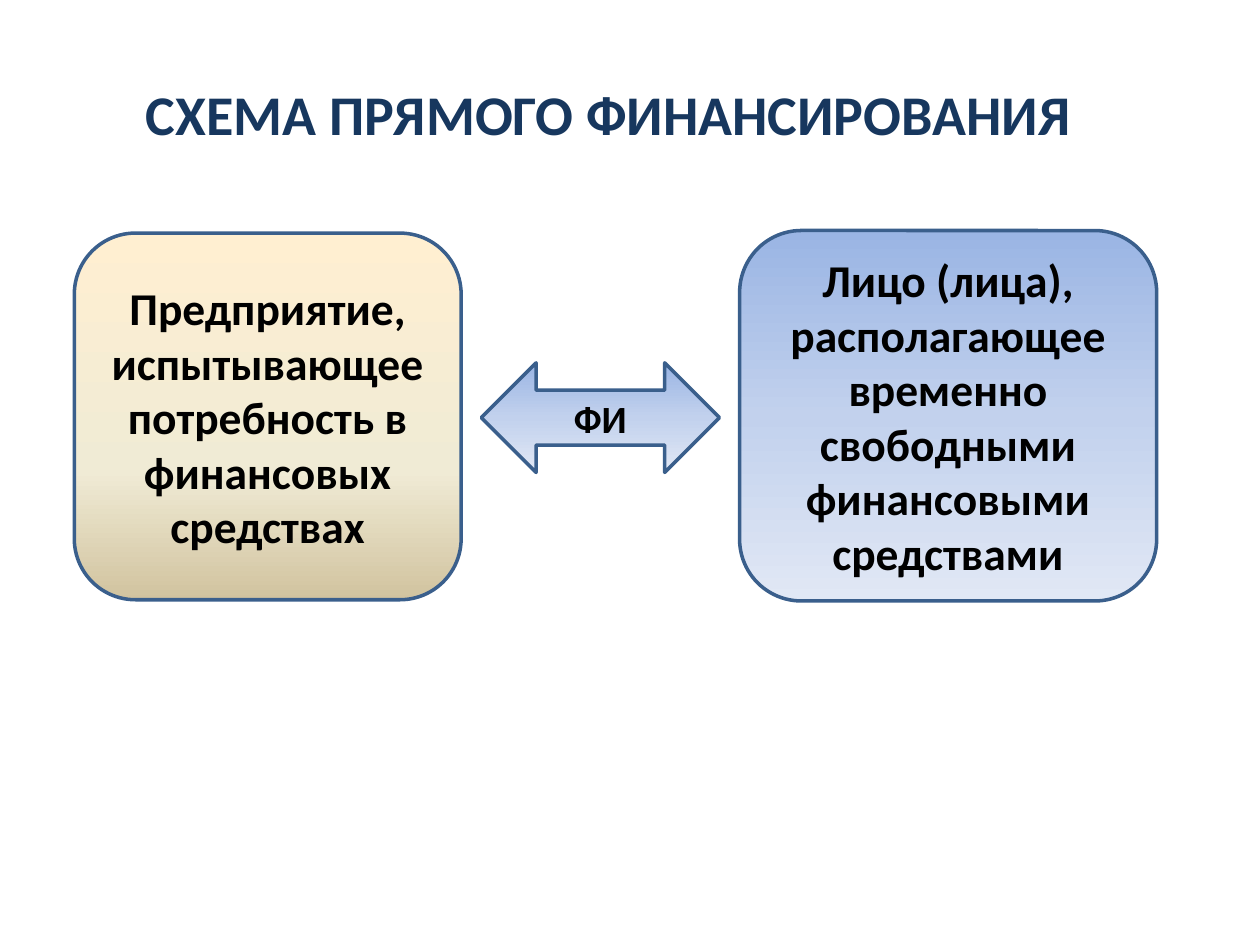
from lxml import etree
from pptx import Presentation
from pptx.dml.color import RGBColor
from pptx.enum import shapes, text
from pptx.oxml.ns import qn
from pptx.util import Inches, Pt

FONT = "Calibri"
NAVY = RGBColor(0x17, 0x37, 0x5E)
OUTLINE = RGBColor(0x3A, 0x5F, 0x8C)
BLACK = RGBColor(0, 0, 0)

# Gradient stops: position in percent, colour
SAND = [(0, RGBColor(0xFF, 0xEF, 0xD1)), (65, RGBColor(0xF0, 0xEB, 0xD5)),
        (100, RGBColor(0xD1, 0xC3, 0x9F))]
BLUE = [(0, RGBColor(0x9A, 0xB5, 0xE4)), (50, RGBColor(0xC2, 0xD1, 0xED)),
        (100, RGBColor(0xE1, 0xE8, 0xF5))]

TITLE = "СХЕМА ПРЯМОГО ФИНАНСИРОВАНИЯ"
TITLE_BOX = (0.62, 0.58, 8.42, 0.64)
ROUNDED = shapes.MSO_SHAPE.ROUNDED_RECTANGLE
ARROW = shapes.MSO_SHAPE.LEFT_RIGHT_ARROW

# Preset, (left, top, width, height), gradient, text size, text
SCHEME = [
    (ROUNDED, (0.59, 1.85, 3.07, 2.91), SAND, 26,
     "Предприятие, испытывающее потребность в финансовых средствах"),
    (ROUNDED, (5.87, 1.83, 3.31, 2.94), BLUE, 26,
     "Лицо (лица), располагающее временно свободными финансовыми средствами"),
    (ARROW, (3.82, 2.88, 1.89, 0.87), BLUE, 22, "ФИ"),
]


def write_centred(shape, wording, size, color):
    frame = shape.text_frame
    frame.word_wrap = True
    frame.text = wording
    paragraph = frame.paragraphs[0]
    paragraph.alignment = text.PP_ALIGN.CENTER
    font = paragraph.runs[0].font
    font.name, font.size, font.bold = FONT, Pt(size), True
    font.color.rgb = color
    return paragraph


def fill_downwards(shape, stops):
    """Fill with a top-to-bottom gradient of any number of stops."""
    shape.fill.gradient()
    shape.fill.gradient_angle = 270
    stop_list = shape.element.spPr.find(qn("a:gradFill")).find(qn("a:gsLst"))
    for old_stop in list(stop_list):
        stop_list.remove(old_stop)
    for percent, color in stops:
        stop = etree.SubElement(stop_list, qn("a:gs"), pos=str(percent * 1000))
        etree.SubElement(stop, qn("a:srgbClr"), val=str(color))


def add_block(slide, preset, box, stops, size, wording):
    shape = slide.shapes.add_shape(preset, *map(Inches, box))
    shape.shadow.inherit = False
    fill_downwards(shape, stops)
    shape.line.color.rgb = OUTLINE
    shape.line.width = Pt(2)
    shape.text_frame.vertical_anchor = text.MSO_ANCHOR.MIDDLE
    write_centred(shape, wording, size, BLACK)


def main():
    presentation = Presentation()
    presentation.slide_width = Inches(10)
    presentation.slide_height = Inches(7.5)
    slide = presentation.slides.add_slide(presentation.slide_layouts[6])

    title = slide.shapes.add_textbox(*map(Inches, TITLE_BOX))
    title.text_frame.auto_size = text.MSO_AUTO_SIZE.SHAPE_TO_FIT_TEXT
    write_centred(title, TITLE, 32, NAVY).space_before = Pt(12)

    for block in SCHEME:
        add_block(slide, *block)

    presentation.save("out.pptx")


if __name__ == "__main__":
    main()
